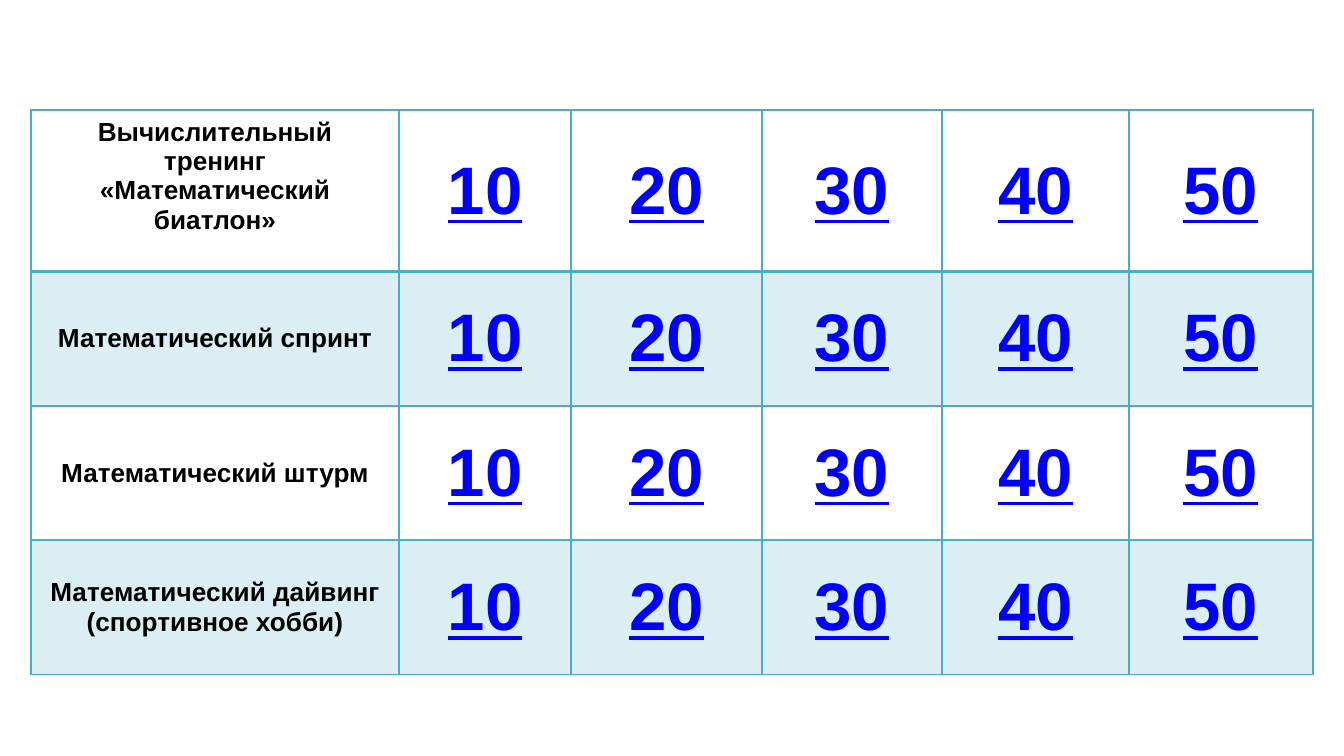
"""Build a quiz board with four topics and five point values."""
from lxml.etree import SubElement
from pptx import Presentation
from pptx.dml.color import RGBColor
from pptx.enum.text import MSO_ANCHOR, PP_ALIGN
from pptx.oxml import parse_xml
from pptx.oxml.ns import nsdecls, qn
from pptx.util import Inches, Pt

TEAL = RGBColor(0x4B, 0xAC, 0xC6)
BLACK = RGBColor(0, 0, 0)
BLUE = RGBColor(0, 0, 0xFF)

TOPICS = [
    ["Вычислительный тренинг", "«Математический биатлон»"],
    ["Математический спринт"],
    ["Математический штурм"],
    ["Математический дайвинг", "(спортивное хобби)"],
]
POINTS = [10, 20, 30, 40, 50]
WIDTHS = [2.74, 1.28, 1.42, 1.34, 1.39, 1.37]
HEIGHTS = [1.2, 1, 1, 1]


def write(cell, lines, size=14, color=BLACK, under=False, bottom=0.04):
    cell.vertical_anchor = MSO_ANCHOR.MIDDLE
    cell.margin_left = cell.margin_right = Inches(0.1)
    cell.margin_top = Inches(0.04)
    cell.margin_bottom = Inches(bottom)
    frame = cell.text_frame
    for i, line in enumerate(lines):
        para = frame.add_paragraph() if i else frame.paragraphs[0]
        para.alignment = PP_ALIGN.CENTER
        run = para.add_run()
        run.text = line
        font = run.font
        font.name = "Arial"
        font.size = Pt(size)
        font.bold = True
        font.underline = under
        font.color.rgb = color


def style(cell, row):
    if row % 2:
        cell.fill.solid()
        cell.fill.fore_color.rgb = TEAL
        props = cell._tc.tcPr
        shade = props.find(qn("a:solidFill"))
        SubElement(shade[0], qn("a:alpha"), val="20000")
    else:
        cell.fill.background()
        props = cell._tc.tcPr
    for i, side in enumerate("LRTB"):
        thick = (row, side) in [(0, "B"), (1, "T")]
        props.insert(i, parse_xml(
            f'<a:ln{side} {nsdecls("a")} w="{Pt(2 if thick else 1)}">'
            f'<a:solidFill><a:srgbClr val="{TEAL}"/></a:solidFill></a:ln{side}>'))


deck = Presentation()
deck.slide_width = Inches(10)
deck.slide_height = Inches(10) * 9 // 16
slide = deck.slides.add_slide(deck.slide_layouts[6])

board = slide.shapes.add_table(
    len(TOPICS), len(WIDTHS), Inches(0.23), Inches(0.82),
    Inches(sum(WIDTHS)), Inches(sum(HEIGHTS))).table
board.first_row = False
board.horz_banding = False
for col, width in zip(board.columns, WIDTHS):
    col.width = Inches(width)

for r, (topic, height) in enumerate(zip(TOPICS, HEIGHTS)):
    board.rows[r].height = Inches(height)
    write(board.cell(r, 0), topic, bottom=0.04 if r else 0.26)
    for c, value in enumerate(POINTS, 1):
        write(board.cell(r, c), [str(value)], size=36, color=BLUE, under=True)
    for cell in board.rows[r].cells:
        style(cell, r)

deck.save("out.pptx")
